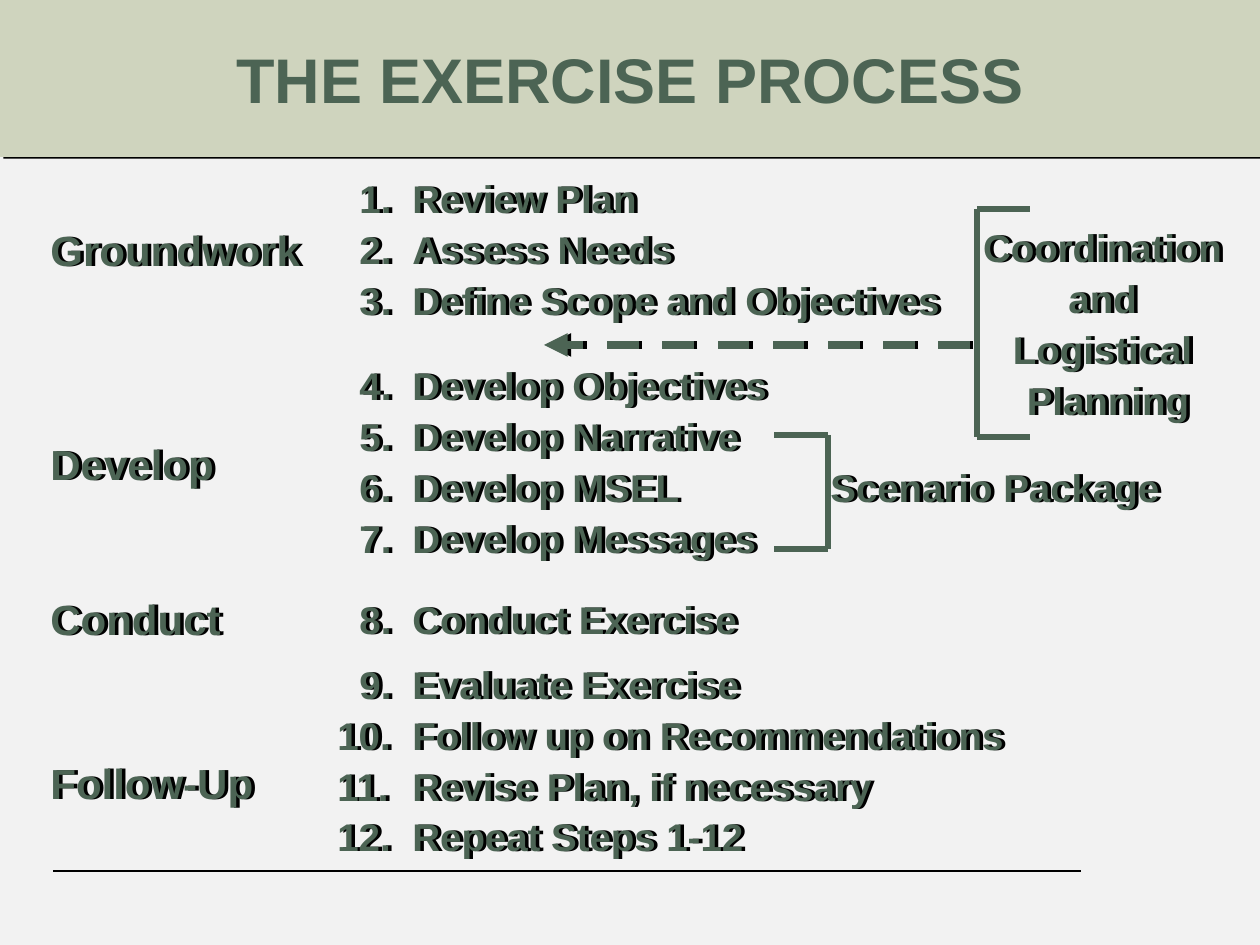
from dataclasses import dataclass

from lxml.etree import SubElement
from pptx import Presentation
from pptx.dml.color import RGBColor
from pptx.enum.dml import MSO_LINE
from pptx.enum.shapes import MSO_CONNECTOR, MSO_SHAPE
from pptx.enum.text import MSO_ANCHOR, MSO_AUTO_SIZE, PP_ALIGN
from pptx.oxml.ns import qn
from pptx.util import Emu, Pt

PX = 914400 / 126


def px(length):
    return Emu(round(length * PX))


@dataclass(frozen=True)
class Theme:
    font: str = "Arial"
    background: str = "F2F2F2"
    band: str = "CFD4BE"
    green: str = "4C6454"
    black: str = "000000"
    title_size: int = 36
    phase_size: int = 24
    step_size: int = 22
    line_spacing: float = 0.85
    space_before: float = 6.6


def apply_format(target, values):
    for name, value in values.items():
        setattr(target, name, value)


class SlideBuilder:
    def __init__(self, slide, theme):
        self.slide = slide
        self.theme = theme
        slide.background.fill.solid()
        slide.background.fill.fore_color.rgb = RGBColor.from_string(theme.background)

    def set_shadow(self, shape, distance=0, degrees=0):
        """Add an effect list, holding a hard black shadow if a distance is given."""
        effects = SubElement(shape._element.spPr, qn("a:effectLst"))
        if distance:
            shadow = SubElement(effects, qn("a:outerShdw"), dist=str(Pt(distance)),
                                dir=str(degrees * 60000), algn="ctr", rotWithShape="0")
            SubElement(shadow, qn("a:srgbClr"), val=self.theme.black)

    def style_font(self, paragraph, size):
        paragraph.font.color.rgb = RGBColor.from_string(self.theme.green)
        apply_format(paragraph.font, {"name": self.theme.font, "size": Pt(size), "bold": True})

    def title_band(self, text, width, height):
        shape = self.slide.shapes.add_shape(MSO_SHAPE.RECTANGLE, 0, 0, px(width), px(height))
        shape.fill.solid()
        shape.fill.fore_color.rgb = RGBColor.from_string(self.theme.band)
        shape.line.fill.background()
        self.set_shadow(shape, 2.2, 27)
        shape.text_frame.vertical_anchor = MSO_ANCHOR.MIDDLE
        paragraph = shape.text_frame.paragraphs[0]
        paragraph.text = text
        paragraph.alignment = PP_ALIGN.CENTER
        self.style_font(paragraph, self.theme.title_size)

    def text(self, box, lines, size, alignment=PP_ALIGN.LEFT, wrap=True):
        shape = self.slide.shapes.add_textbox(*map(px, box))
        self.set_shadow(shape, 2)
        frame = shape.text_frame
        apply_format(frame, {"word_wrap": wrap, "auto_size": MSO_AUTO_SIZE.SHAPE_TO_FIT_TEXT})
        for index, line in enumerate(lines):
            paragraph = frame.add_paragraph() if index else frame.paragraphs[0]
            paragraph.text = line
            apply_format(paragraph, {
                "alignment": alignment,
                "line_spacing": self.theme.line_spacing,
                "space_before": Pt(self.theme.space_before if index else 0),
            })
            self.style_font(paragraph, size)
        return frame.paragraphs

    def steps(self, top, height, first, names):
        """Numbered steps: numbers end in line, names start on a hanging indent."""
        lines = [f"{number}.\t{name}" for number, name in enumerate(names, first)]
        paragraphs = self.text((325, top, 700, height), lines, self.theme.step_size)
        for number, paragraph in enumerate(paragraphs, first):
            properties = paragraph._p.get_or_add_pPr()
            properties.set("marL", str(px(75)))
            properties.set("indent", str(-px(75 if number > 9 else 53)))

    def line(self, start, end, color, width, dashed_arrow=False):
        connector = self.slide.shapes.add_connector(
            MSO_CONNECTOR.STRAIGHT, *map(px, (*start, *end)))
        connector.line.color.rgb = RGBColor.from_string(color)
        connector.line.width = Pt(width)
        if dashed_arrow:
            connector.line.dash_style = MSO_LINE.DASH
            SubElement(connector.line._get_or_add_ln(), qn("a:tailEnd"), type="triangle")
        self.set_shadow(connector, 2 if dashed_arrow else 0)

    def bracket(self, spine, arm_end, top, bottom):
        self.line((spine, top), (spine, bottom), self.theme.green, 3)
        for y in (top, bottom):
            self.line((spine, y), (arm_end, y), self.theme.green, 3)


def main():
    presentation = Presentation()
    apply_format(presentation, {"slide_width": px(1260), "slide_height": px(945)})
    theme = Theme()
    slide = presentation.slides.add_slide(presentation.slide_layouts[6])
    builder = SlideBuilder(slide, theme)

    # Footer rule and title
    builder.line((1081, 871), (53, 871), theme.black, 0.75)
    builder.title_band("THE EXERCISE PROCESS", 1260, 157)

    # Phases: name, top
    for name, top in (("Groundwork", 226), ("Develop", 440),
                      ("Conduct", 595), ("Follow-Up", 759)):
        builder.text((38, top, 285, 55), [name], theme.phase_size)

    # Steps of each phase: top, height, names
    first = 1
    for top, height, names in (
        (176, 160, ("Review Plan", "Assess Needs", "Define Scope and Objectives")),
        (363, 210, ("Develop Objectives", "Develop Narrative", "Develop MSEL",
                    "Develop Messages")),
        (597, 52, ("Conduct Exercise",)),
        (662, 210, ("Evaluate Exercise", "Follow up on Recommendations",
                    "Revise Plan, if necessary", "Repeat Steps 1-12")),
    ):
        builder.steps(top, height, first, names)
        first += len(names)

    # Scenario package
    builder.bracket(828, 774, 435, 549)
    builder.text((818, 465, 370, 52), ["Scenario Package"], theme.step_size)

    # Coordination and planning, with the arrow to the steps
    builder.text((970, 225, 276, 210), ["Coordination ", "and ", "Logistical ", "Planning"],
                 theme.step_size, PP_ALIGN.CENTER, wrap=False)
    builder.bracket(977, 1030, 209, 437)
    builder.line((970, 345), (544, 345), theme.green, 4.5, dashed_arrow=True)

    presentation.save("out.pptx")


if __name__ == "__main__":
    main()
